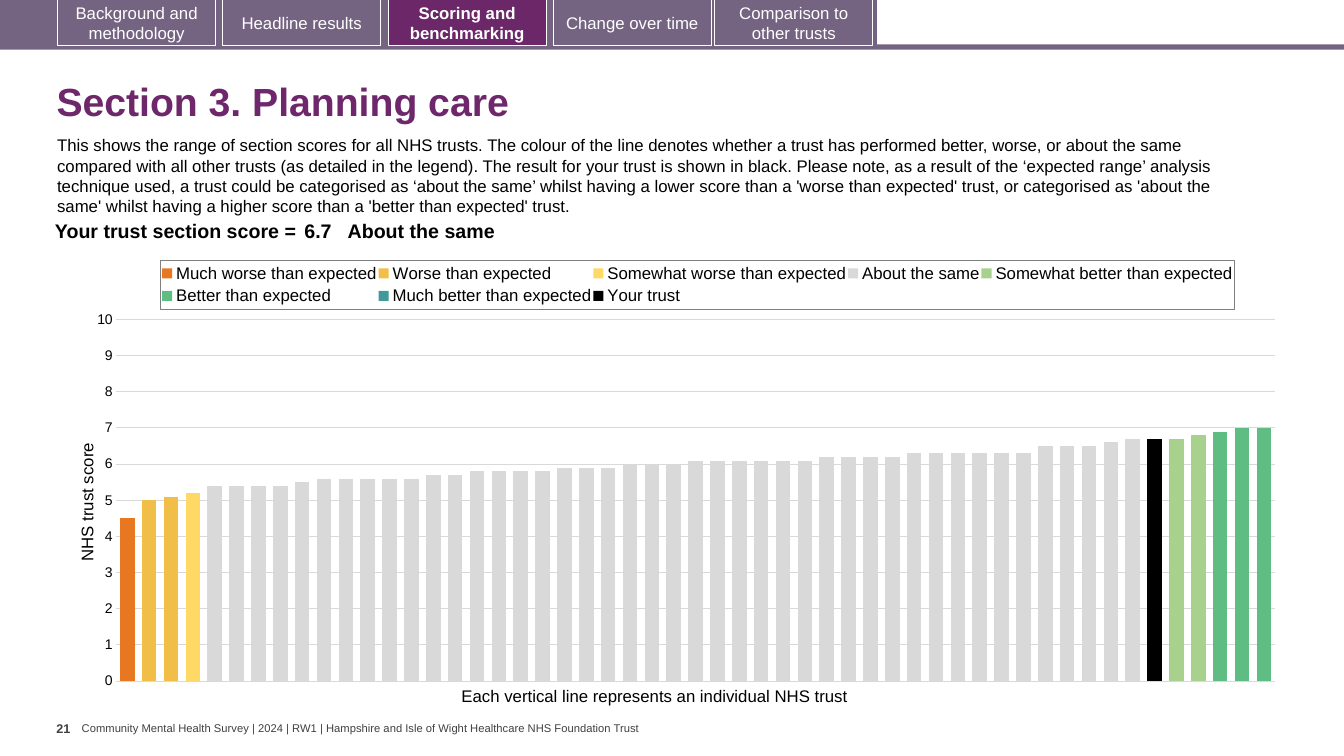
import copy
import pptx
import pptx.chart.axis
import pptx.chart.data
import pptx.dml.color
import pptx.enum.chart
import pptx.enum.shapes
import pptx.enum.text
import pptx.oxml
import pptx.oxml.ns
import pptx.util

Cm, Pt = pptx.util.Cm, pptx.util.Pt
qn = pptx.oxml.ns.qn
ALIGN = pptx.enum.text.PP_ALIGN
ANCHOR = pptx.enum.text.MSO_ANCHOR
TICK = pptx.enum.chart.XL_TICK_MARK

MAUVE, PLUM, BLACK, WHITE, GREY = "756382", "6D276A", "000000", "FFFFFF", "404040"
TABS = [
    ("Background and methodology", 1.45),
    ("Headline results", 5.61),
    ("Scoring and benchmarking", 9.78),
    ("Change over time", 13.94),
    ("Comparison to other trusts", 18.01),
]
ACTIVE = "Scoring and benchmarking"
INTRO = (
    "This shows the range of section scores for all NHS trusts. The colour of the line denotes "
    "whether a trust has performed better, worse, or about the same compared with all other trusts "
    "(as detailed in the legend). The result for your trust is shown in black. Please note, as a "
    "result of the ‘expected range’ analysis technique used, a trust could be categorised as ‘about "
    "the same’ whilst having a lower score than a 'worse than expected' trust, or categorised as "
    "'about the same' whilst having a higher score than a 'better than expected' trust."
)
SAME = (
    [5.4] * 4 + [5.5] + [5.6] * 5 + [5.7] * 2 + [5.8] * 4 + [5.9] * 3 + [6] * 3
    + [6.1] * 6 + [6.2] * 4 + [6.3] * 6 + [6.5] * 3 + [6.6] + [6.7] * 2
)
TRUSTS = 53
# name, colour, first trust, scores
BANDS = [
    ("Much worse than expected", "E87722", 1, [4.5]),
    ("Worse than expected", "F1BE48", 2, [5, 5.1]),
    ("Somewhat worse than expected", "FFD966", 4, [5.2]),
    ("About the same", "D9D9D9", 5, SAME),
    ("Somewhat better than expected", "A9D18E", 49, [6.7, 6.8]),
    ("Better than expected", "5FBD83", 51, [6.9, 7, 7]),
    ("Much better than expected", "419999", 1, []),
    ("Your trust", BLACK, 48, [6.7]),
]


def rgb(code):
    return pptx.dml.color.RGBColor.from_string(code)


def style(font, size, color=BLACK, bold=False):
    font.name, font.size, font.bold = "Arial", Pt(size), bold
    font.color.rgb = rgb(color)


def write(frame, text, size, color=BLACK, bold=False, align=ALIGN.LEFT):
    para = frame.paragraphs[0]
    para.alignment = align
    run = para.add_run()
    run.text = text
    style(run.font, size, color, bold)
    return para


def pad(box, x, y):
    box.margin_left = box.margin_right = Cm(x)
    box.margin_top = box.margin_bottom = Cm(y)


def label(slide, spot, text, size, color=BLACK, bold=False, wrap=False):
    frame = slide.shapes.add_textbox(*map(Cm, spot)).text_frame
    frame.word_wrap = wrap
    write(frame, text, size, color, bold)
    return frame


def block(slide, spot, fill, line=None):
    kind = pptx.enum.shapes.MSO_SHAPE.RECTANGLE
    shape = slide.shapes.add_shape(kind, *map(Cm, spot))
    shape.shadow.inherit = False
    shape.fill.solid()
    shape.fill.fore_color.rgb = rgb(fill)
    if line:
        shape.line.color.rgb = rgb(line)
        shape.line.width = Pt(0.75)
    else:
        shape.line.fill.background()
    return shape


def tabs(slide):
    block(slide, (0, 1.12, 33.87, 0.13), MAUVE)
    block(slide, (0, 0, 22.1, 1.19), MAUVE)
    for text, left in TABS:
        on = text == ACTIVE
        tab = block(slide, (left, -0.03, 3.99, 1.19), "6B2768" if on else MAUVE, WHITE)
        tab.text_frame.word_wrap = True
        tab.text_frame.vertical_anchor = ANCHOR.MIDDLE
        write(tab.text_frame, text, 12, WHITE, on, ALIGN.CENTER)


def title(slide, text):
    head = slide.shapes.title
    head.left, head.top, head.width, head.height = map(Cm, (1.17, 1.7, 31.72, 1.83))
    head.text_frame.vertical_anchor = ANCHOR.MIDDLE
    write(head.text_frame, text, 28, PLUM, True).line_spacing = 0.9


def score(slide):
    wide = (6.68, 1.19, 21.82)
    spot = map(Cm, (0.89, 5.46, sum(wide), 0.56))
    table = slide.shapes.add_table(1, 3, *spot).table
    table.first_row = table.horz_banding = False
    texts = ("Your trust section score =", "6.7", "About the same")
    sides = (ALIGN.RIGHT, ALIGN.LEFT, ALIGN.LEFT)
    for i, text in enumerate(texts):
        table.columns[i].width = Cm(wide[i])
        cell = table.cell(0, i)
        cell.fill.background()
        pad(cell, 0 if i == 2 else 0.1, 0.1)
        write(cell.text_frame, text, 14, BLACK, True, sides[i])


def place(host, index, inner=False, **spots):
    """Set a manual layout, in percent of the chart, as child number index."""
    for old in host.findall(qn("c:layout")):
        host.remove(old)
    mode = '<c:layoutTarget val="inner"/>' if inner else ""
    mode += '<c:xMode val="edge"/><c:yMode val="edge"/>'
    mode += "".join(f'<c:{key} val="{val / 100}"/>' for key, val in spots.items())
    host.insert(index, pptx.oxml.parse_xml(
        f'<c:layout {pptx.oxml.ns.nsdecls("c")}><c:manualLayout>{mode}'
        "</c:manualLayout></c:layout>"))


def second(chart):
    """Move the last series to a second pair of axes."""
    main = chart.plots[0]._element
    cat, val = chart.category_axis._element, chart.value_axis._element
    extra, cat2, val2 = map(copy.deepcopy, (main, cat, val))
    main.remove(main.findall(qn("c:ser"))[-1])
    for ser in extra.findall(qn("c:ser"))[:-1]:
        extra.remove(ser)
    for node, (own, other) in ((cat2, ("501", "502")), (val2, ("502", "501"))):
        node.find(qn("c:axId")).set("val", own)
        node.find(qn("c:crossAx")).set("val", other)
    for node, name in zip(extra.findall(qn("c:axId")), ("501", "502")):
        node.set("val", name)
    main.addnext(extra)
    val.addnext(val2)
    val2.addnext(cat2)
    val2.find(qn("c:axPos")).set("val", "r")
    pptx.chart.axis.CategoryAxis(cat2).crosses = pptx.enum.chart.XL_AXIS_CROSSES.MAXIMUM
    right = pptx.chart.axis.ValueAxis(val2)
    right.has_major_gridlines = False
    right.major_tick_mark = TICK.OUTSIDE
    right.tick_label_position = pptx.enum.chart.XL_TICK_LABEL_POSITION.NONE


def legend(chart):
    chart.has_legend = True
    key = chart.legend
    key.position = pptx.enum.chart.XL_LEGEND_POSITION.TOP
    key.include_in_layout = False
    style(key.font, 12)
    place(key._element, 1, x=7.6, y=2.5, w=87.7, h=11)
    key._element.find(qn("c:overlay")).addnext(pptx.oxml.parse_xml(
        f'<c:spPr {pptx.oxml.ns.nsdecls("c", "a")}><a:ln w="9525"><a:solidFill>'
        '<a:srgbClr val="7F7F7F"/></a:solidFill></a:ln></c:spPr>'))


def graph(slide):
    data = pptx.chart.data.CategoryChartData(number_format="General")
    data.categories = [str(n + 1) for n in range(TRUSTS)]
    for name, _, first, vals in BANDS:
        row = [None] * TRUSTS
        row[first - 1:first - 1 + len(vals)] = vals
        data.add_series(name, row)
    kind = pptx.enum.chart.XL_CHART_TYPE.COLUMN_CLUSTERED
    spot = map(Cm, (1.7, 6.27, 30.86, 11.28))
    chart = slide.shapes.add_chart(kind, *spot, data).chart
    chart.has_title = False
    chart.font.name, chart.font.size = "Calibri", Pt(10)
    chart.font.color.rgb = rgb(BLACK)
    plot = chart.plots[0]
    plot.gap_width, plot.overlap, plot.vary_by_categories = 50, 100, False
    for ser, band in zip(plot.series, BANDS):
        ser.format.fill.solid()
        ser.format.fill.fore_color.rgb = rgb(band[1])
        ser.invert_if_negative = False
    chart.category_axis.visible = False
    axis = chart.value_axis
    axis.minimum_scale, axis.maximum_scale, axis.major_unit = 0, 10, 1
    axis.major_tick_mark = axis.minor_tick_mark = TICK.NONE
    axis.format.line.fill.background()
    style(axis.tick_labels.font, 10)
    second(chart)
    grid = axis.major_gridlines.format.line
    grid.color.rgb, grid.width = rgb("D9D9D9"), Pt(0.75)
    write(axis.axis_title.text_frame, "NHS trust score", 12)
    place(axis.axis_title._element, 1, x=0.5, y=42.7)
    place(plot._element.getparent(), 0, True, x=4, y=15.8, w=94.6, h=80.8)
    legend(chart)


def main():
    deck = pptx.Presentation()
    deck.slide_width, deck.slide_height = Cm(33.87), Cm(19.05)
    slide = deck.slides.add_slide(deck.slide_layouts[5])
    foot = label(slide, (2.06, 18.19, 14.22, 0.33),
                 "Community Mental Health Survey | 2024 | RW1 | "
                 "Hampshire and Isle of Wight Healthcare NHS Foundation Trust", 8, GREY)
    pad(foot, 0, 0)
    foot.vertical_anchor = ANCHOR.MIDDLE
    tabs(slide)
    title(slide, "Section 3. Planning care")
    pad(label(slide, (1.42, 18.03, 0.64, 1.02), "21", 9, GREY, True), 0, 0.13)
    label(slide, (1.19, 3.28, 30.81, 2.31), INTRO, 12, wrap=True)
    label(slide, (11.38, 17.15, 10.44, 0.76),
          "Each vertical line represents an individual NHS trust", 12)
    graph(slide)
    score(slide)
    deck.save("out.pptx")


if __name__ == "__main__":
    main()
